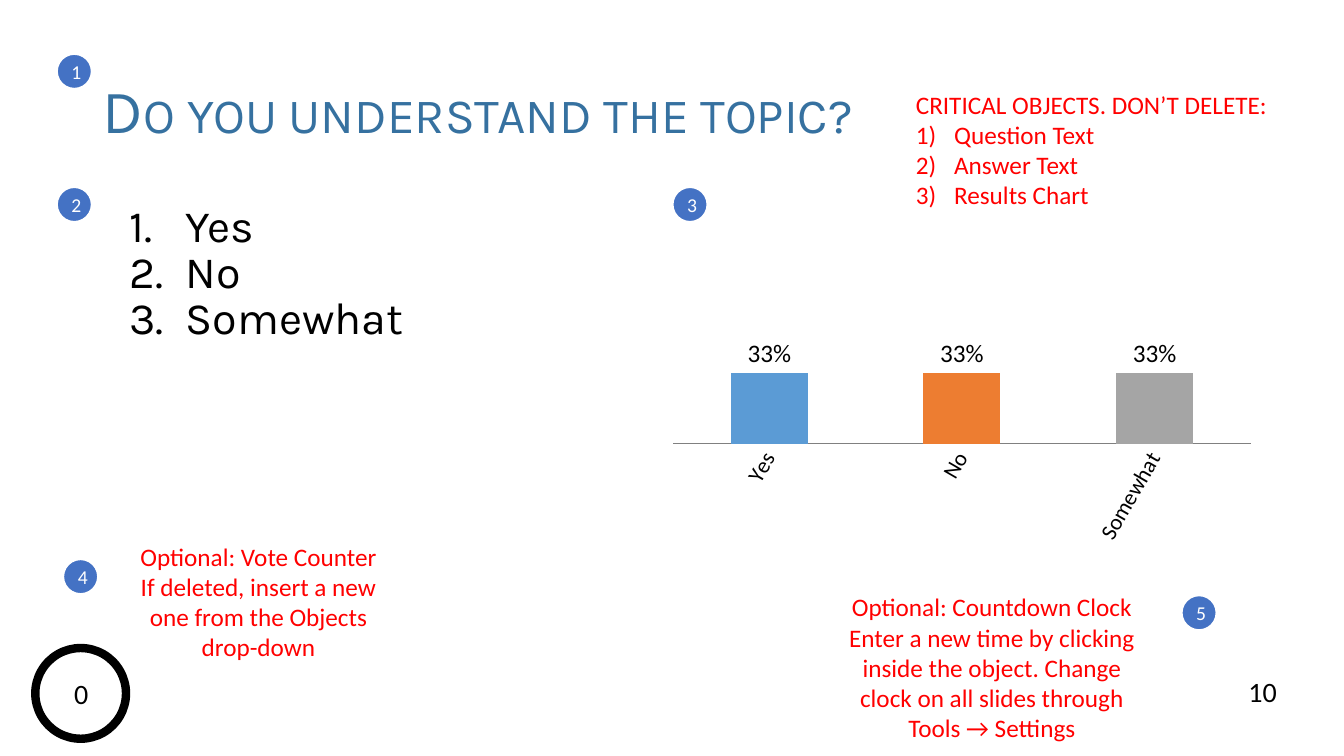
from lxml import etree
from pptx import Presentation
from pptx import util as u
from pptx.chart.data import CategoryChartData
from pptx.dml.color import RGBColor
from pptx.enum import chart as ch, shapes, text
from pptx.oxml.ns import qn

THEME = {
    "title": ("Karla", 44, "3671A0"),
    "answer": ("Karla", 32, "000000"),
    "number": ("Calibri", 20, "000000"),
    "hint": ("Calibri", 18, "FF0000"),
    "badge": ("Calibri", 14, "FFFFFF"),
    "value": ("Calibri", 18, "000000"),
    "badge_fill": "4472C4",
    "axis": "808080",
    "bars": ["5B9BD5", "ED7D31", "A5A5A5"],
    "category_size": 16,
}
LEFT, CENTER = text.PP_ALIGN.LEFT, text.PP_ALIGN.CENTER
COLS, ROWS = 32, 18
ANSWERS = ["Yes", "No", "Somewhat"]

prs = Presentation()
prs.slide_width, prs.slide_height = u.Inches(13.33), u.Inches(7.5)
s = prs.slides.add_slide(prs.slide_layouts[1])


def grid(col, row, cols, rows):
    """Turn grid columns and rows into left, top, width and height."""
    w, h = prs.slide_width / COLS, prs.slide_height / ROWS
    return [round(n) for n in (col * w, row * h, cols * w, rows * h)]


def write(tf, lines, style, align=LEFT, scheme=None, indent=0, first=0):
    """Fill a frame; lines from index first on are numbered by scheme."""
    name, size, color = THEME[style]
    tf.word_wrap = True
    for i, line in enumerate(lines):
        p = tf.paragraphs[0] if i == 0 else tf.add_paragraph()
        p.alignment = align
        p.space_before = u.Pt(0)
        if scheme and i >= first:
            pPr = p._p.get_or_add_pPr()
            pPr.set("marL", str(u.Inches(indent)))
            pPr.set("indent", str(-u.Inches(indent)))
            etree.SubElement(pPr, qn("a:buFont"), typeface="+mj-lt")
            etree.SubElement(pPr, qn("a:buAutoNum"), type=scheme)
        r = p.add_run()
        r.text = line
        r.font.name, r.font.size = name, u.Pt(size)
        r.font.color.rgb = RGBColor.from_string(color)


# Results chart
data = CategoryChartData()
data.categories = ANSWERS
data.add_series("Series 1", [0.33] * len(ANSWERS))
chart = s.shapes.add_chart(ch.XL_CHART_TYPE.COLUMN_CLUSTERED,
                           *grid(15.74, 5.3, 14.33, 7.82), data).chart
chart.has_title = chart.has_legend = False
name, size, color = THEME["value"]
chart.font.name, chart.font.size = name, u.Pt(size)
chart.font.color.rgb = RGBColor.from_string(color)
votes = chart.value_axis
votes.minimum_scale, votes.maximum_scale = 0, 1
votes.has_major_gridlines = votes.visible = False
axis = chart.category_axis
axis.major_tick_mark = ch.XL_TICK_MARK.NONE
axis.format.line.color.rgb = RGBColor.from_string(THEME["axis"])
axis.tick_labels.font.size = u.Pt(THEME["category_size"])
axis._element.find(qn("c:txPr")).find(qn("a:bodyPr")).set("rot", "-3600000")
plot = chart.plots[0]
plot.gap_width, plot.vary_by_categories = 150, False
plot.has_data_labels = True
labels = plot.data_labels
labels.show_value = True
labels.number_format, labels.number_format_is_linked = "0%", False
labels.position = ch.XL_LABEL_POSITION.OUTSIDE_END
labels.font.size = u.Pt(size)
for i, bar in enumerate(THEME["bars"]):
    fill = plot.series[0].points[i].format.fill
    fill.solid()
    fill.fore_color.rgb = RGBColor.from_string(bar)

# Question and answers
title, body = s.shapes.title, s.placeholders[1]
title.left, title.top, title.width, title.height = grid(2.21, 0.96, 27.6, 3.48)
body.left, body.top, body.width, body.height = grid(2.84, 4.79, 10.8, 3.55)
write(title.text_frame, ["Do you understand the topic?"], "title")
title.text_frame.vertical_anchor = text.MSO_ANCHOR.MIDDLE
p = title.text_frame.paragraphs[0]
p.line_spacing = 0.9
p.runs[0].font._element.set("cap", "small")
write(body.text_frame, ANSWERS, "answer", LEFT, "arabicPeriod", 0.56)
for p in body.text_frame.paragraphs:
    p.line_spacing = 0.85

# Vote counter ring
ring = s.shapes.add_shape(shapes.MSO_SHAPE.OVAL, *grid(0.84, 15.43, 2.16, 2.16))
ring.shadow.inherit = False
ring.fill.background()
ring.line.color.rgb, ring.line.width = RGBColor(0, 0, 0), u.Pt(6)

# Counters and hints
for place, lines, style in [
    ((29.07, 15.94, 1.99, 1.06), ["10"], "number"),
    ((0.94, 16, 1.99, 1.06), ["0"], "number"),
    ((3, 12.76, 6.31, 3.14),
     ["Optional: Vote Counter",
      "If deleted, insert a new one from the Objects drop-down"], "hint"),
    ((19.75, 13.97, 7.73, 3.89),
     ["Optional: Countdown Clock",
      "Enter a new time by clicking inside the object. "
      "Change clock on all slides through Tools → Settings"], "hint"),
]:
    write(s.shapes.add_textbox(*grid(*place)).text_frame, lines, style, CENTER)

critical = s.shapes.add_textbox(*grid(21.57, 2, 9.1, 3.14))
write(critical.text_frame,
      ["CRITICAL OBJECTS. DON’T DELETE:",
       "Question Text", "Answer Text", "Results Chart"],
      "hint", LEFT, "arabicParenR", 0.38, first=1)

# Numbered badges
badges = [(1.34, 1.27), (1.34, 4.44), (16, 4.44), (1.49, 13.3), (28.12, 14.16)]
for n, (col, row) in enumerate(badges, 1):
    sp = s.shapes.add_shape(shapes.MSO_SHAPE.OVAL, *grid(col, row, 0.86, 0.86))
    sp.shadow.inherit = False
    sp.fill.solid()
    sp.fill.fore_color.rgb = RGBColor.from_string(THEME["badge_fill"])
    sp.line.color.rgb, sp.line.width = RGBColor(255, 255, 255), u.Pt(2.25)
    write(sp.text_frame, [str(n)], "badge", CENTER)
    sp.text_frame.vertical_anchor = text.MSO_ANCHOR.MIDDLE

prs.save("out.pptx")
